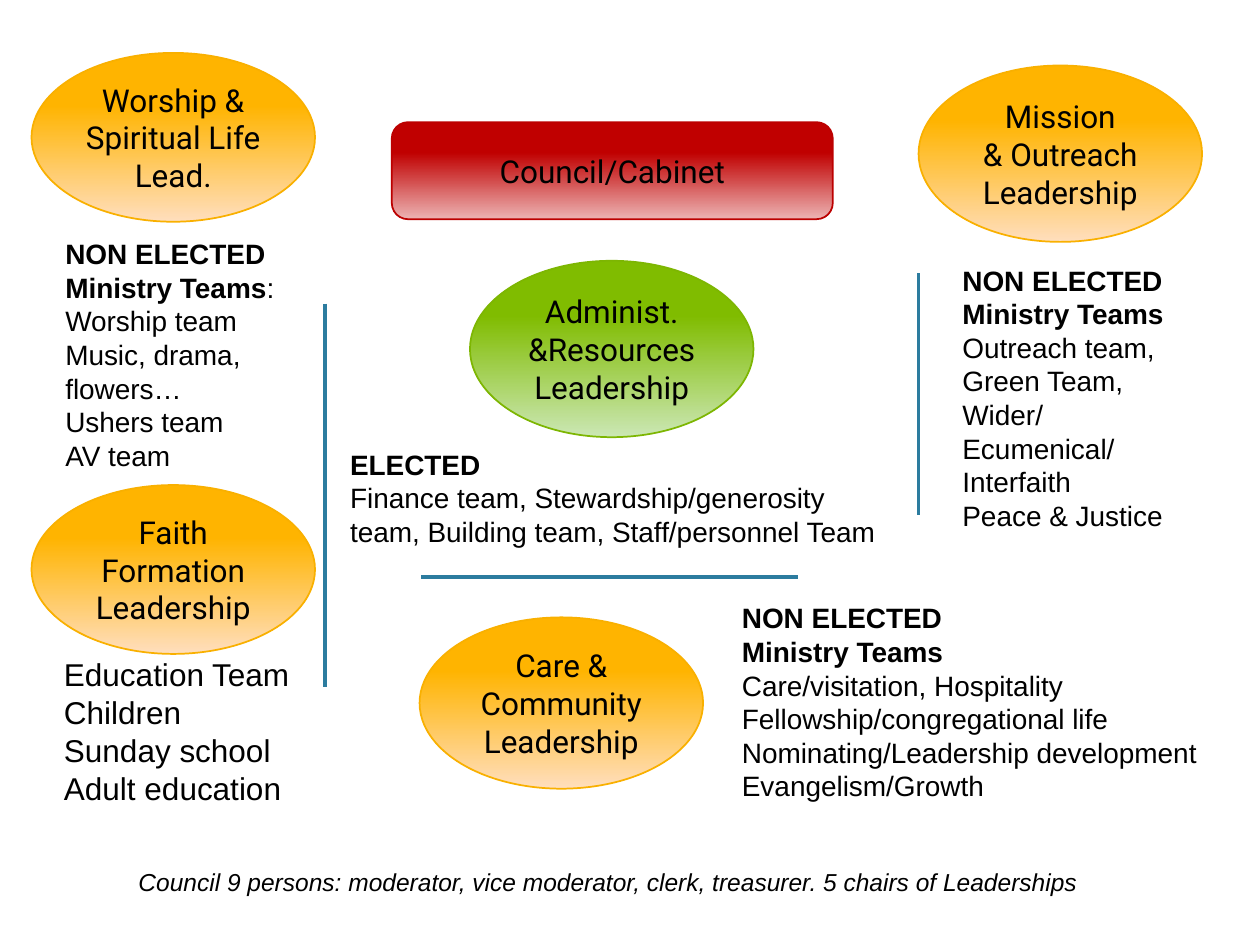
import pptx
import pptx.dml.color
import pptx.enum.shapes
import pptx.enum.text
import pptx.util
from lxml import etree

RGB = pptx.dml.color.RGBColor
SHAPES = pptx.enum.shapes.MSO_SHAPE
CENTER = pptx.enum.text.PP_ALIGN.CENTER

BLACK = RGB(0x00, 0x00, 0x00)
DIVIDER_BLUE = RGB(0x2C, 0x7C, 0x9F)
# Each palette: gradient start, gradient end, outline
ORANGE = (RGB(0xFF, 0xB4, 0x00), RGB(0xFF, 0xDE, 0xBD), RGB(0xF9, 0xB0, 0x00))
GREEN = (RGB(0x80, 0xBC, 0x00), RGB(0xCB, 0xE7, 0xB4), RGB(0x7D, 0xB6, 0x02))
RED = (RGB(0xC0, 0x00, 0x00), RGB(0xEC, 0xB3, 0xB3), RGB(0xBC, 0x00, 0x00))

COLUMNS, ROWS = 100, 75
CELL = pptx.util.Inches(10) // COLUMNS
OVAL_WIDTH = 22.5
BOLD_HEADINGS = ("NON ELECTED", "ELECTED", "Ministry Teams")


def cells(*counts):
    """Turn counts of grid cells into slide lengths."""
    return [round(count * CELL) for count in counts]


def style_run(run, font_name, size):
    run.font.name = font_name
    run.font.size = pptx.util.Pt(size)
    run.font.color.rgb = BLACK


def add_unit(slide, box, outline, palette, lines):
    """Draw one gradient-filled body of the organisation."""
    unit = slide.shapes.add_shape(outline, *cells(*box))
    unit.shadow.inherit = False
    start, end, border = palette
    unit.fill.gradient()
    unit.fill.gradient_angle = 270
    for stop, color, position in zip(unit.fill.gradient_stops, (start, end), (0.31, 1)):
        stop.color.rgb = color
        stop.position = position
    unit.line.color.rgb = border
    unit.line.width = pptx.util.Pt(1)
    frame = unit.text_frame
    frame.word_wrap = True
    frame.vertical_anchor = pptx.enum.text.MSO_ANCHOR.MIDDLE
    frame.text = "\n".join(lines)
    for paragraph in frame.paragraphs:
        paragraph.alignment = CENTER
        for run in paragraph.runs:
            style_run(run, "Roboto", 18)


def add_text(slide, box, lines, size=16, italic=None):
    """Place lines of text, with any leading heading words in bold."""
    frame = slide.shapes.add_textbox(*cells(*box)).text_frame
    frame.word_wrap = True
    frame.auto_size = pptx.enum.text.MSO_AUTO_SIZE.SHAPE_TO_FIT_TEXT
    for index, line in enumerate(lines):
        paragraph = frame.paragraphs[0] if index == 0 else frame.add_paragraph()
        heading = next((h for h in BOLD_HEADINGS if line.startswith(h)), "")
        for words, bold in ((heading, True), (line[len(heading):], None)):
            if words:
                run = paragraph.add_run()
                run.text = words
                style_run(run, "Arial", size)
                run.font.bold = bold
                run.font.italic = italic


def add_leadership(slide, origin, oval, title, teams_box, teams, palette=ORANGE, size=16):
    """Place a leadership oval and its teams, both measured from the origin."""
    left, top = origin
    oval_x, oval_y, oval_height = oval
    add_unit(slide, (left + oval_x, top + oval_y, OVAL_WIDTH, oval_height),
             SHAPES.OVAL, palette, title)
    teams_x, teams_y, width, height = teams_box
    add_text(slide, (left + teams_x, top + teams_y, width, height), teams, size)


def add_divider(slide, *ends):
    divider = slide.shapes.add_connector(
        pptx.enum.shapes.MSO_CONNECTOR.STRAIGHT, *cells(*ends))
    divider.line.color.rgb = DIVIDER_BLUE
    divider.line.width = pptx.util.Pt(2)
    etree.SubElement(divider.element.spPr, pptx.oxml.ns.qn("a:effectLst"))


def main():
    deck = pptx.Presentation()
    deck.slide_width, deck.slide_height = cells(COLUMNS, ROWS)
    slide = deck.slides.add_slide(deck.slide_layouts[6])

    add_leadership(slide, (2.5, 4.2), (0, 0, 13.4),
                   ["Worship &", "Spiritual Life Lead."], (1.7, 14.1, 21, 19.9),
                   ["NON ELECTED", "Ministry Teams:", "Worship team",
                    "Music, drama, flowers…", "Ushers team", "AV team"])
    add_leadership(slide, (2.5, 38.5), (0, 0, 13.4),
                   ["Faith Formation", "Leadership"], (1.6, 13, 20, 16.2),
                   ["Education Team", "Children Sunday school", "Adult education"],
                   size=18)
    add_leadership(slide, (72.9, 5.2), (0, 0, 14),
                   ["Mission", "& Outreach", "Leadership"], (2.5, 15.2, 21, 19.9),
                   ["NON ELECTED", "Ministry Teams", "Outreach team, Green Team,",
                    "Wider/Ecumenical/Interfaith", "Peace & Justice"])
    add_leadership(slide, (26.8, 20.7), (10.5, 0, 14),
                   ["Administ. &Resources", "Leadership"], (0, 14.3, 45.8, 11.8),
                   ["ELECTED", "Finance team, Stewardship/generosity team, "
                    "Building team, Staff/personnel Team"], palette=GREEN)
    add_leadership(slide, (33.3, 47.2), (0, 1.8, 13.6),
                   ["Care & Community", "Leadership"], (24.6, 0, 39.6, 17.2),
                   ["NON ELECTED", "Ministry Teams", "Care/visitation, Hospitality",
                    "Fellowship/congregational life",
                    "Nominating/Leadership development", "Evangelism/Growth"])
    add_unit(slide, (31.1, 9.7, 35, 7.7), SHAPES.ROUNDED_RECTANGLE, RED,
             ["Council/Cabinet"])

    add_divider(slide, 72.9, 21.7, 72.9, 40.9)
    add_divider(slide, 63.3, 45.8, 33.4, 45.8)
    add_divider(slide, 25.8, 24.1, 25.8, 54.5)

    add_text(slide, (10, 68.3, 79.2, 3.4),
             ["Council 9 persons: moderator, vice moderator, clerk, treasurer. "
              "5 chairs of Leaderships"], size=14, italic=True)
    deck.save("out.pptx")


if __name__ == "__main__":
    main()
